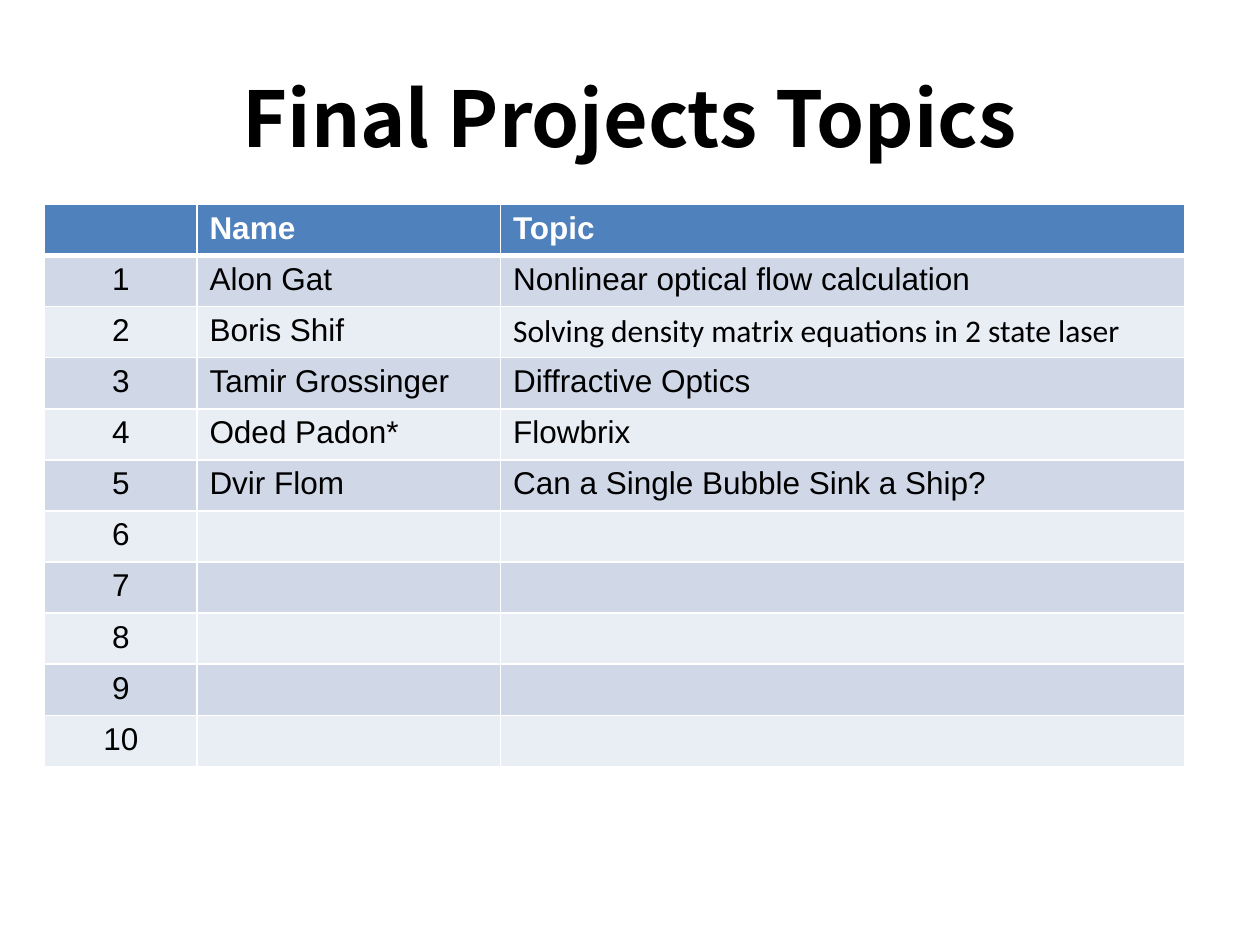
from dataclasses import dataclass

from lxml.etree import SubElement
from pptx import Presentation
from pptx.dml.color import RGBColor as RGB
from pptx.enum.text import MSO_ANCHOR as Anchor, PP_ALIGN as Align
from pptx.oxml.ns import qn
from pptx.util import Cm, Pt


@dataclass(frozen=True)
class Theme:
    black: str = "000000"
    white: str = "FFFFFF"
    header: str = "4F81BD"
    bands: tuple[str, str] = ("D0D8E8", "E9EDF4")
    font: str = "Arial"
    alt_font: str = "Calibri"
    title_font: str = "Noto Sans CJK KR"
    title_size: int = 44
    body_size: int = 18
    thin: int = 1
    thick: int = 3


@dataclass(frozen=True)
class Project:
    name: str = ""
    topic: str = ""
    topic_font: str = Theme.font


THEME = Theme()
ROW_COUNT = 10
COL_WIDTHS = (3.07, 6.12, 13.8)
ROW_HEIGHT = 1.03
PROJECTS = [
    Project("Alon Gat", "Nonlinear optical flow calculation"),
    Project("Boris Shif", "Solving density matrix equations in 2 state laser", THEME.alt_font),
    Project("Tamir Grossinger", "Diffractive Optics"),
    Project("Oded Padon*", "Flowbrix"),
    Project("Dvir Flom", "Can a Single Bubble Sink a Ship?"),
]


def write(tf, text: str, *, size: int = THEME.body_size, font: str = THEME.font,
          color: str = THEME.black, bold: bool = False, align=Align.LEFT, rtl: bool = False) -> None:
    """Put one formatted line of text into a text frame."""
    p = tf.paragraphs[0]
    p.alignment = align
    r = p.add_run()
    r.text = text
    r.font.size, r.font.name, r.font.bold = Pt(size), font, bold
    r.font.color.rgb = RGB.from_string(color)
    if rtl:  # right-to-left text takes the complex-script font
        p._p.get_or_add_pPr().set("rtl", "1")
        SubElement(r._r.get_or_add_rPr(), qn("a:cs"), typeface=font)


def style_cell(cell, fill: str, top: int, bottom: int) -> None:
    """Draw white borders, then the fill (the order the schema asks for)."""
    tc_pr = cell._tc.get_or_add_tcPr()
    for tag, width in (("lnL", THEME.thin), ("lnR", THEME.thin), ("lnT", top), ("lnB", bottom)):
        ln = SubElement(tc_pr, qn(f"a:{tag}"), w=str(Pt(width)))
        SubElement(SubElement(ln, qn("a:solidFill")), qn("a:srgbClr"), val=THEME.white)
    cell.fill.solid()
    cell.fill.fore_color.rgb = RGB.from_string(fill)


def add_title(s, text: str) -> None:
    sp = s.shapes.title
    sp.left, sp.top, sp.width, sp.height = Cm(1.27), Cm(0.76), Cm(22.86), Cm(3.18)
    sp.text_frame.vertical_anchor = Anchor.MIDDLE
    write(sp.text_frame, text, size=THEME.title_size, font=THEME.title_font,
          bold=True, align=Align.CENTER)


def add_project_table(s, projects: list[Project]) -> None:
    rows = ROW_COUNT + 1
    table = s.shapes.add_table(rows, len(COL_WIDTHS), Cm(0.9), Cm(4.12),
                               Cm(sum(COL_WIDTHS)), Cm(ROW_HEIGHT * rows)).table
    for col, width in zip(table.columns, COL_WIDTHS):
        col.width = Cm(width)
    for row in table.rows:
        row.height = Cm(ROW_HEIGHT)

    # Header row, closed by a thick rule
    for cell, text in zip(table.rows[0].cells, ("", "Name", "Topic")):
        style_cell(cell, THEME.header, THEME.thin, THEME.thick)
        if text:
            write(cell.text_frame, text, color=THEME.white, bold=True)

    # Numbered rows in alternating bands; those without a project stay open
    for n in range(1, rows):
        cells = list(table.rows[n].cells)
        for cell in cells:
            style_cell(cell, THEME.bands[(n - 1) % 2],
                       THEME.thick if n == 1 else THEME.thin, THEME.thin)
        write(cells[0].text_frame, str(n), align=Align.CENTER, rtl=True)
        if n <= len(projects):
            project = projects[n - 1]
            write(cells[1].text_frame, project.name)
            write(cells[2].text_frame, project.topic, font=project.topic_font)


def main() -> None:
    prs = Presentation()
    prs.slide_width, prs.slide_height = Cm(25.4), Cm(19.05)
    s = prs.slides.add_slide(prs.slide_layouts[5])  # title only
    add_title(s, "Final Projects Topics")
    add_project_table(s, PROJECTS)
    prs.save("out.pptx")


if __name__ == "__main__":
    main()
